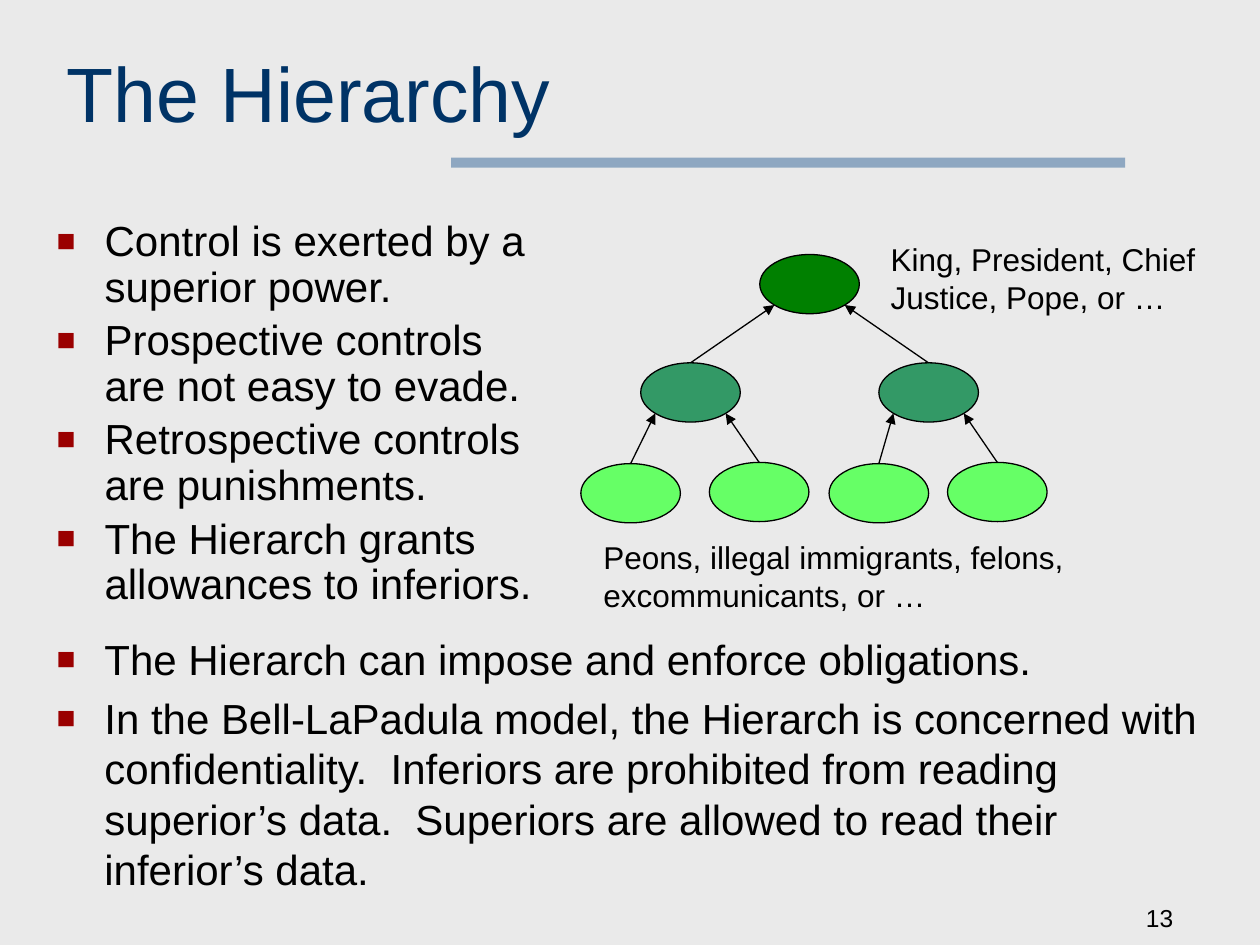
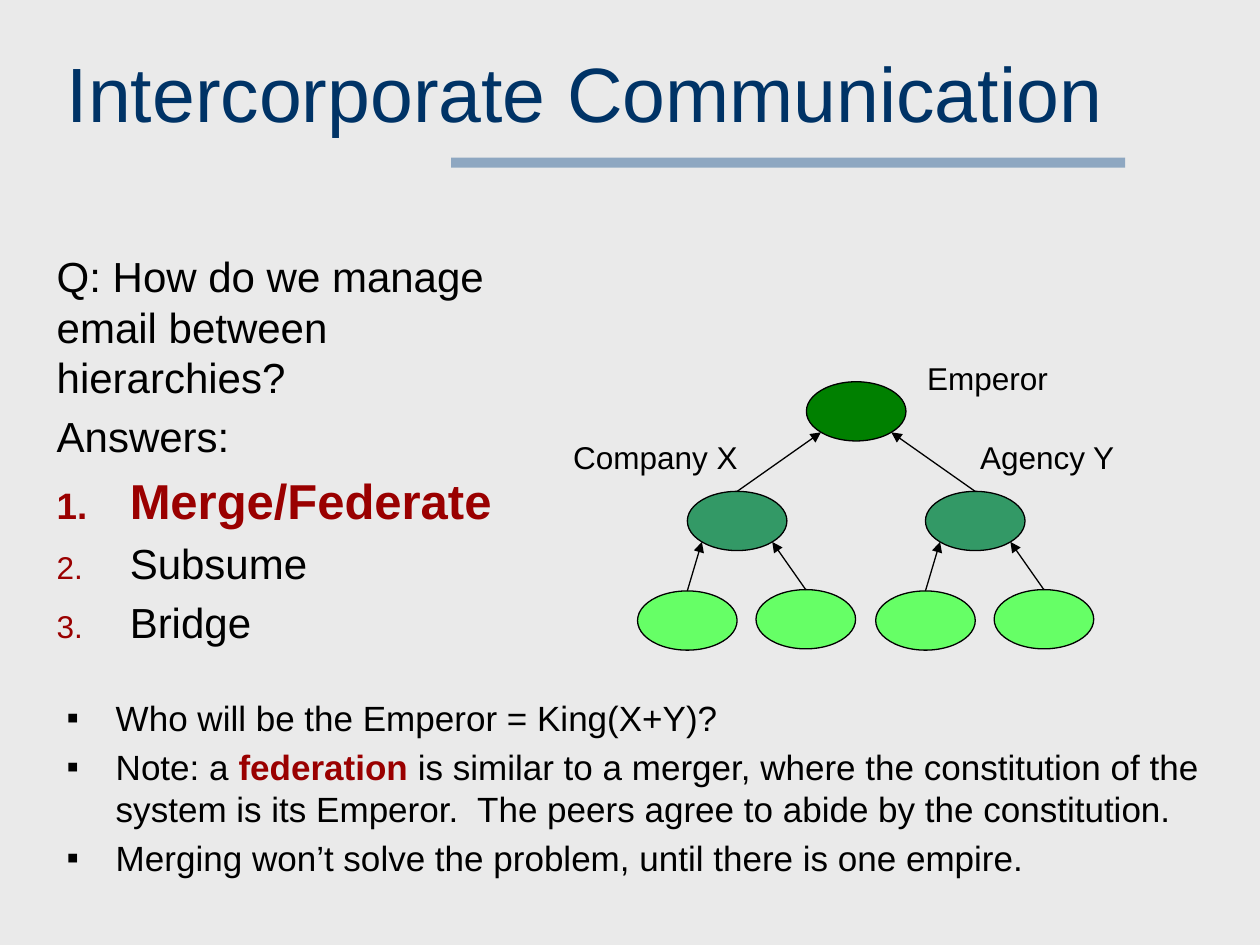
from dataclasses import dataclass
from math import sqrt
from typing import NamedTuple

from lxml.etree import SubElement
from pptx import Presentation
from pptx.dml.color import RGBColor
from pptx.enum.shapes import MSO_CONNECTOR as Connector, MSO_SHAPE as Preset
from pptx.enum.text import MSO_ANCHOR as Anchor, MSO_AUTO_SIZE as AutoSize, PP_ALIGN as Align
from pptx.oxml.ns import qn
from pptx.util import Inches, Pt


@dataclass(frozen=True)
class Theme:
    font: str = "Arial"
    background: str = "EAEAEA"
    band: str = "336699"
    title: str = "003366"
    text: str = "000000"
    accent: str = "9A0000"
    tiers: tuple[str, ...] = ("008000", "339966", "66FF66")
    title_size: int = 44
    strong_size: int = 28
    body_size: int = 24
    note_size: int = 20
    label_size: int = 18
    number_size: int = 14


THEME = Theme()


class Frame(NamedTuple):
    left: float
    top: float
    width: float
    height: float

    def lengths(self) -> list:
        return [Inches(value) for value in self]


class Span(NamedTuple):
    text: str
    color: str = THEME.text
    bold: bool = False


@dataclass(frozen=True)
class Style:
    """Paragraph format; mark is a bullet character, or "1." for numbering."""
    size: int = THEME.body_size
    indent: float = 0
    mark: str = ""
    mark_color: str = THEME.accent
    mark_percent: int = 75
    line_spacing: float = 1.0
    before: float = 0.2
    align: Align = Align.LEFT


@dataclass(frozen=True)
class Line:
    spans: tuple[Span, ...]
    style: Style


@dataclass(frozen=True)
class Tree:
    apex_left: float
    tops: tuple[float, float, float]
    leaf_lefts: tuple[float, ...]


TITLE_FRAME = Frame(0.43, 0.25, 9.02, 1.19)
BAND_FRAME = Frame(3.58, 1.25, 5.35, 0.08)
NODE_WIDTH, NODE_HEIGHT = 0.79, 0.47
BRANCH = 0.945  # sideways step from the apex to its two subordinates
LEFT_LEAF_DROP = 0.01

SQUARE = Style(indent=0.38, mark="■")
TIGHT_SQUARE = Style(indent=0.38, mark="■", line_spacing=0.9)
ANSWER = Style(indent=0.58, mark="1.")
STRONG_ANSWER = Style(size=THEME.strong_size, indent=0.58, mark="1.")
NOTE = Style(size=THEME.note_size, indent=0.39, mark="▪",
             mark_color=THEME.text, mark_percent=100)
LABEL = Style(size=THEME.label_size, before=0)
HEADING = Style(size=THEME.title_size, before=0)
PAGE_NUMBER = Style(size=THEME.number_size, before=0, align=Align.RIGHT)


def rgb(color: str) -> RGBColor:
    return RGBColor.from_string(color)


def plain(text: str, style: Style) -> Line:
    return Line((Span(text),), style)


def add_span(para, text: str, *, size: int, color: str, bold: bool) -> None:
    span = para.add_run()
    span.text = text
    span.font.name = THEME.font
    span.font.size = Pt(size)
    span.font.color.rgb = rgb(color)
    span.font.bold = bold


def set_mark(para, style: Style) -> None:
    """Set the hanging indent and the bullet or number."""
    properties = para._p.get_or_add_pPr()
    properties.set("marL", str(Inches(style.indent)))
    properties.set("indent", str(-Inches(style.indent)))
    if not style.mark:
        SubElement(properties, qn("a:buNone"))
        return
    color = SubElement(properties, qn("a:buClr"))
    SubElement(color, qn("a:srgbClr"), val=style.mark_color)
    SubElement(properties, qn("a:buSzPct"), val=str(style.mark_percent * 1000))
    SubElement(properties, qn("a:buFont"), typeface=THEME.font)
    if style.mark == "1.":
        SubElement(properties, qn("a:buAutoNum"), type="arabicPeriod")
    else:
        SubElement(properties, qn("a:buChar"), char=style.mark)


def write(box, frame: Frame, lines: list[Line], *, anchor: Anchor = Anchor.TOP,
          wrap: bool = True) -> None:
    """Place a text box or placeholder and fill it with formatted lines."""
    box.left, box.top, box.width, box.height = frame.lengths()
    text_frame = box.text_frame
    text_frame.auto_size = AutoSize.NONE
    text_frame.word_wrap = wrap
    text_frame.vertical_anchor = anchor
    for index, line in enumerate(lines):
        para = text_frame.add_paragraph() if index else text_frame.paragraphs[0]
        style = line.style
        para.alignment = style.align
        para.line_spacing = style.line_spacing
        para.space_before = Pt(style.size * style.before)
        set_mark(para, style)
        for span in line.spans:
            add_span(para, span.text, size=style.size, color=span.color, bold=span.bold)


def add_text(page, frame: Frame, lines: list[Line], **options) -> None:
    write(page.shapes.add_textbox(*frame.lengths()), frame, lines, **options)


def add_filled(page, preset: Preset, frame: Frame, color: str):
    shape = page.shapes.add_shape(preset, *frame.lengths())
    shape.shadow.inherit = False
    shape.fill.solid()
    shape.fill.fore_color.rgb = rgb(color)
    return shape


def add_band(page) -> None:
    band = add_filled(page, Preset.RECTANGLE, BAND_FRAME, THEME.band)
    band.line.fill.background()
    color = band.element.spPr.find(".//" + qn("a:srgbClr"))
    SubElement(color, qn("a:alpha"), val="50000")


def add_node(page, left: float, top: float, tier: int):
    node = add_filled(page, Preset.OVAL, Frame(left, top, NODE_WIDTH, NODE_HEIGHT),
                      THEME.tiers[tier])
    node.line.color.rgb = rgb(THEME.text)
    node.line.width = Pt(0.75)
    return node


def add_arrow(page, child, parent, side: int) -> None:
    """Point from the child's top to the parent's lower left (-1) or right (1)."""
    reach = 1 / sqrt(2)
    end_x = parent.left + parent.width / 2 * (1 + side * reach)
    end_y = parent.top + parent.height / 2 * (1 + reach)
    arrow = page.shapes.add_connector(Connector.STRAIGHT, child.left, child.top,
                                      int(end_x), int(end_y))
    arrow.begin_connect(child, 0)
    arrow.line.color.rgb = rgb(THEME.text)
    arrow.line.width = Pt(0.75)
    SubElement(arrow.get_or_add_ln(), qn("a:tailEnd"), type="triangle")
    SubElement(arrow.element.spPr, qn("a:effectLst"))


def add_tree(page, tree: Tree) -> None:
    apex_top, boss_top, leaf_top = tree.tops
    apex = add_node(page, tree.apex_left, apex_top, 0)
    leaf_lefts = iter(tree.leaf_lefts)
    for boss_side in (-1, 1):
        boss = add_node(page, tree.apex_left + boss_side * BRANCH, boss_top, 1)
        add_arrow(page, boss, apex, boss_side)
        for leaf_side, drop in ((-1, LEFT_LEAF_DROP), (1, 0)):
            leaf = add_node(page, next(leaf_lefts), leaf_top + drop, 2)
            add_arrow(page, leaf, boss, leaf_side)


def add_page(deck, title: str, body_frame: Frame, body: list[Line]):
    page = deck.slides.add_slide(deck.slide_layouts[1])
    add_band(page)
    write(page.shapes.title, TITLE_FRAME, [
        Line((Span(title, THEME.title),), HEADING)])
    page.shapes.title.text_frame.margin_top = Inches(0.11)
    write(page.placeholders[1], body_frame, body)
    return page


def add_hierarchy(deck) -> None:
    page = add_page(deck, "The Hierarchy", Frame(0.35, 1.7, 4.1, 3.15), [
        plain(text, TIGHT_SQUARE) for text in (
            "Control is exerted by a superior power.",
            "Prospective controls are not easy to evade.",
            "Retrospective controls are punishments.",
            "The Hierarch grants allowances to inferiors.",
        )])
    add_tree(page, Tree(6.03, (2.02, 2.88, 3.67), (4.61, 5.63, 6.58, 7.52)))
    add_text(page, Frame(6.97, 1.86, 2.76, 0.7), [
        plain("King, President, Chief Justice, Pope, or …", LABEL)])
    add_text(page, Frame(4.69, 4.22, 4.67, 0.7), [
        plain("Peons, illegal immigrants, felons, excommunicants, or …", LABEL)])
    add_text(page, Frame(0.35, 4.98, 9.41, 2.2), [
        plain("The Hierarch can impose and enforce obligations.", SQUARE),
        plain("In the Bell-LaPadula model, the Hierarch is concerned with "
              "confidentiality.  Inferiors are prohibited from reading superior’s "
              "data.  Superiors are allowed to read their inferior’s data.", SQUARE),
    ])
    add_text(page, Frame(7.33, 7.14, 2.08, 0.31), [plain("13", PAGE_NUMBER)],
             anchor=Anchor.BOTTOM)


def add_communication(deck) -> None:
    page = add_page(deck, "Intercorporate Communication", Frame(0.35, 1.94, 3.94, 3.31), [
        plain("Q: How do we manage email between hierarchies?", Style()),
        plain("Answers:", Style(indent=0.58)),
        Line((Span("Merge/Federate", THEME.accent, True),), STRONG_ANSWER),
        plain("Subsume", ANSWER),
        plain("Bridge", ANSWER),
    ])
    add_tree(page, Tree(6.4, (3.03, 3.9, 4.68), (5.06, 6.0, 6.95, 7.89)))
    add_text(page, Frame(4.45, 3.43, 1.65, 0.4), [plain("Company X", LABEL)])
    add_text(page, Frame(7.68, 3.43, 1.57, 0.4), [plain("Agency Y", LABEL)])
    add_text(page, Frame(7.26, 2.8, 1.16, 0.4), [plain("Emperor", LABEL)], wrap=False)
    add_text(page, Frame(0.43, 5.48, 9.21, 1.58), [
        plain("Who will be the Emperor = King(X+Y)?", NOTE),
        Line((Span("Note: a "),
              Span("federation", THEME.accent, True),
              Span(" is similar to a merger, where the constitution of the system is "
                   "its Emperor.  The peers agree to abide by the constitution.")), NOTE),
        plain("Merging won’t solve the problem, until there is one empire.", NOTE),
    ])


def main() -> None:
    deck = Presentation()
    deck.slide_width, deck.slide_height = Inches(10), Inches(7.5)
    background = deck.slide_master.background.fill
    background.solid()
    background.fore_color.rgb = rgb(THEME.background)
    add_hierarchy(deck)
    add_communication(deck)
    deck.save("out.pptx")


if __name__ == "__main__":
    main()
